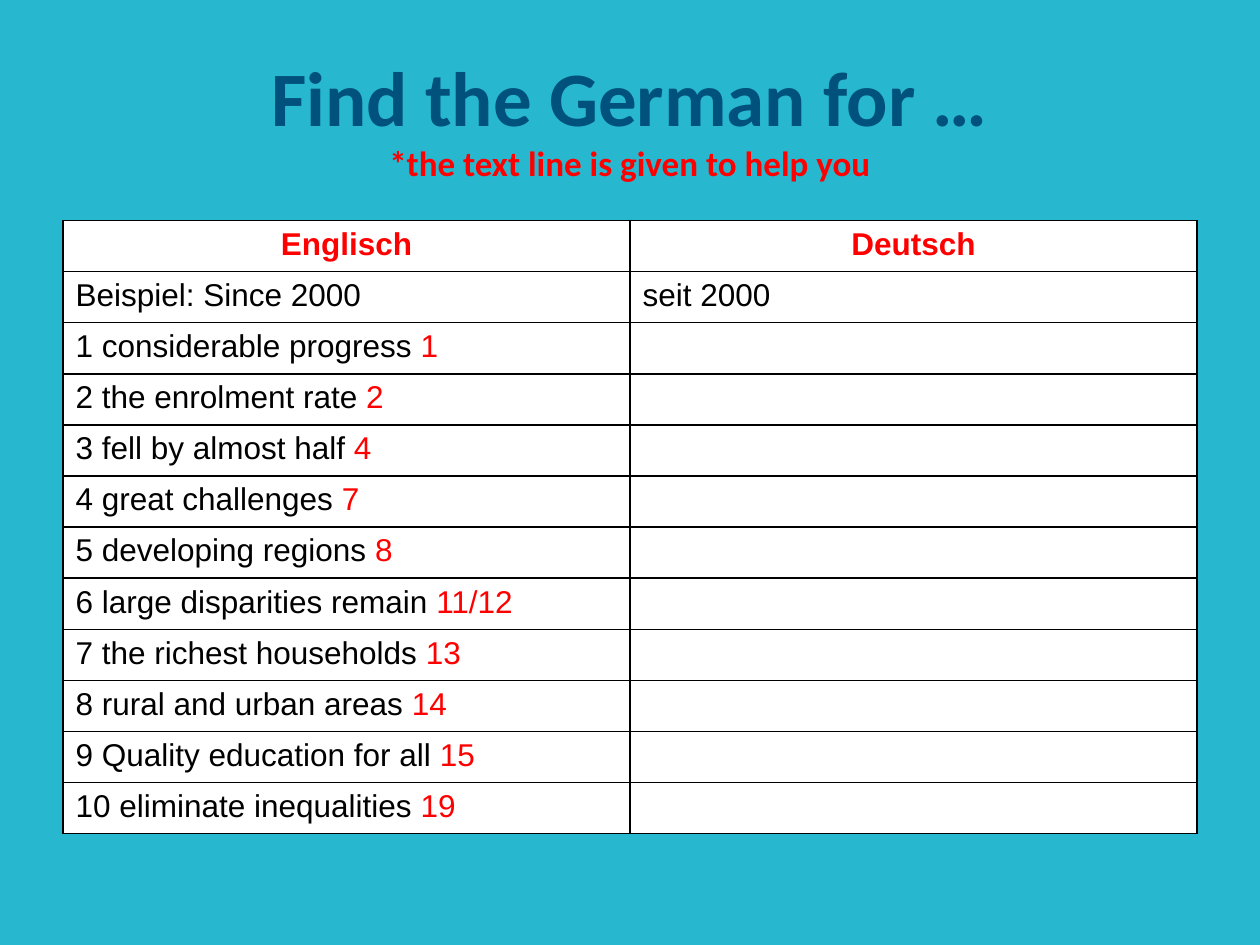
from dataclasses import dataclass

from lxml import etree
from pptx import Presentation
from pptx.dml.color import RGBColor
from pptx.enum.text import MSO_ANCHOR, MSO_AUTO_SIZE, PP_ALIGN
from pptx.oxml.ns import qn
from pptx.util import Inches, Pt

CENTER, LEFT = PP_ALIGN.CENTER, PP_ALIGN.LEFT
MIDDLE = MSO_ANCHOR.MIDDLE
NO_AUTOFIT = MSO_AUTO_SIZE.NONE
TITLE_ONLY = 5


@dataclass(frozen=True)
class Theme:
    background: str = "27B8CF"
    title: str = "00527D"
    accent: str = "FF0000"
    text: str = "000000"
    cell: str = "FFFFFF"
    border: str = "000000"
    border_pt: float = 1
    title_font: str = "Calibri"
    body_font: str = "Arial"
    title_pt: int = 44
    subtitle_pt: int = 20
    body_pt: int = 18


THEME = Theme()

# English phrase and the text line where its German version is found
PHRASES = [
    ("considerable progress", "1"),
    ("the enrolment rate", "2"),
    ("fell by almost half", "4"),
    ("great challenges", "7"),
    ("developing regions", "8"),
    ("large disparities remain", "11/12"),
    ("the richest households", "13"),
    ("rural and urban areas", "14"),
    ("Quality education for all", "15"),
    ("eliminate inequalities", "19"),
]


def format_run(r, font, size, color, bold=False):
    r.font.name = font
    r.font.size = Pt(size)
    r.font.bold = bold
    r.font.color.rgb = RGBColor.from_string(color)


def add_title(s, box, heading, hint):
    sp = s.shapes.title
    sp.left, sp.top, sp.width, sp.height = box
    tf = sp.text_frame
    tf.text = f"{heading}\v{hint}"
    tf.word_wrap = True
    tf.auto_size = NO_AUTOFIT
    tf.vertical_anchor = MIDDLE
    p = tf.paragraphs[0]
    p.alignment = CENTER
    main, sub = p.runs
    format_run(main, THEME.title_font, THEME.title_pt, THEME.title, True)
    format_run(sub, THEME.title_font, THEME.subtitle_pt, THEME.accent, True)


def set_borders(cell):
    tc_pr = cell._tc.get_or_add_tcPr()
    for i, side in enumerate(("lnL", "lnR", "lnT", "lnB")):
        ln = etree.Element(qn(f"a:{side}"), w=str(Pt(THEME.border_pt)))
        fill = etree.SubElement(ln, qn("a:solidFill"))
        etree.SubElement(fill, qn("a:srgbClr"), val=THEME.border)
        tc_pr.insert(i, ln)  # borders come before the fill


def fill_cell(cell, parts, bold=False, align=LEFT):
    """Write (text, colour) parts into a white, bordered cell."""
    cell.fill.solid()
    cell.fill.fore_color.rgb = RGBColor.from_string(THEME.cell)
    set_borders(cell)
    p = cell.text_frame.paragraphs[0]
    p.alignment = align
    for text, color in parts:
        r = p.add_run()
        r.text = text
        format_run(r, THEME.body_font, THEME.body_pt, color, bold)


def add_vocabulary_table(s, box, headers, example, phrases):
    rows = [[[(text, THEME.text)] for text in example]]
    for number, (phrase, line) in enumerate(phrases, 1):
        rows.append([[(f"{number} {phrase} ", THEME.text), (line, THEME.accent)], []])

    table = s.shapes.add_table(len(rows) + 1, len(headers), *box).table
    for col, text in enumerate(headers):
        fill_cell(table.cell(0, col), [(text, THEME.accent)], True, CENTER)
    for row, cells in enumerate(rows, 1):
        for col, parts in enumerate(cells):
            fill_cell(table.cell(row, col), parts)


def main():
    prs = Presentation()
    prs.slide_width, prs.slide_height = Inches(10), Inches(7.5)
    w, h = prs.slide_width, prs.slide_height
    s = prs.slides.add_slide(prs.slide_layouts[TITLE_ONLY])
    s.background.fill.solid()
    s.background.fill.fore_color.rgb = RGBColor.from_string(THEME.background)

    # Both regions share the same side margins
    left, width = int(w * 0.05), int(w * 0.9)
    add_title(s, (left, int(h * 0.04), width, Inches(1.25)),
              "Find the German for …", "*the text line is given to help you")
    add_vocabulary_table(s, (left, Inches(1.75), width, Inches(4.87)),
                         ("Englisch", "Deutsch"),
                         ("Beispiel: Since 2000", "seit 2000"), PHRASES)
    prs.save("out.pptx")


if __name__ == "__main__":
    main()
